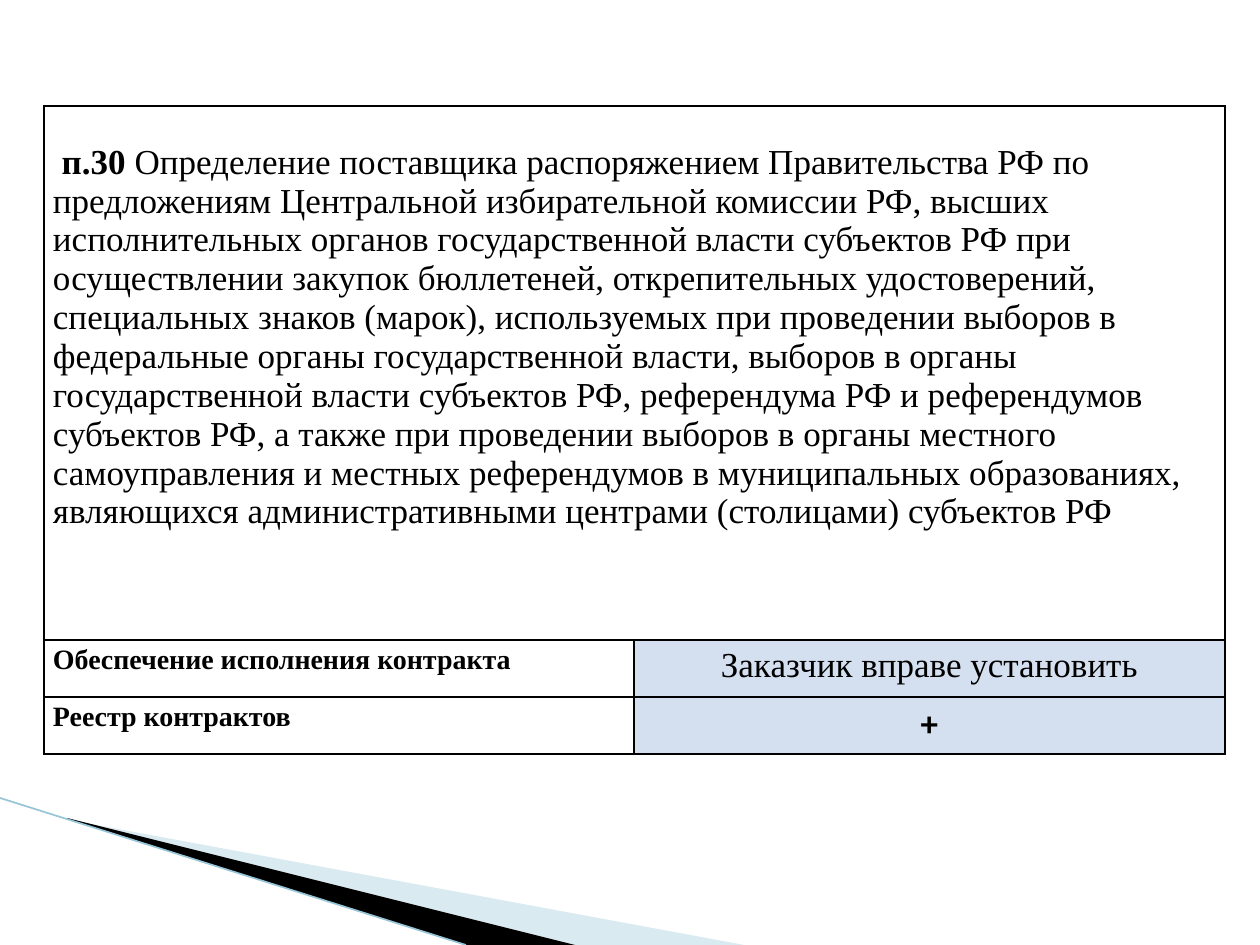
from dataclasses import dataclass

from lxml.etree import SubElement
from pptx import Presentation
from pptx.dml.color import RGBColor
from pptx.enum.text import MSO_ANCHOR, PP_ALIGN
from pptx.oxml.ns import qn
from pptx.util import Emu, Pt

SCALE = 914400 / 126
WIDE, HIGH = 1260, 945
SERIF, SANS = "Times New Roman", "Calibri"
BLACK, BLUE = "000000", "D4DFEF"


@dataclass
class Run:
    """A piece of text in one style."""
    text: str
    size: int = 20
    bold: bool = False
    font: str = SERIF


@dataclass
class Box:
    """The content and look of one table cell."""
    runs: list[Run]
    fill: str | None = None
    align: PP_ALIGN = PP_ALIGN.LEFT
    space: float = 1.15
    top: int = 0


@dataclass
class Wedge:
    """A filled outline with an opacity in percent."""
    points: list[tuple[int, int]]
    fill: str
    alpha: int = 100


WEDGES = [
    Wedge([(69, 820), (744, HIGH), (575, HIGH), (69, 819)], "A0CBDC", 40),
    Wedge([(67, 818), (575, HIGH), (466, HIGH), (68, 819)], BLACK),
]
COLS = [590, 591]
ROWS = [534, 57, 57]
CELLS = [
    [Box([
        Run(" п.30 ", bold=True),
        Run("Определение поставщика распоряжением Правительства РФ по "
            "предложениям Центральной избирательной комиссии РФ, высших "
            "исполнительных органов государственной власти субъектов РФ при "
            "осуществлении закупок бюллетеней, открепительных удостоверений, "
            "специальных знаков (марок), используемых при проведении выборов в "
            "федеральные органы государственной власти, выборов в органы "
            "государственной власти субъектов РФ, референдума РФ и референдумов "
            "субъектов РФ, а также при проведении выборов в органы местного "
            "самоуправления и местных референдумов в муниципальных образованиях, "
            "являющихся административными центрами (столицами) субъектов РФ"),
    ], space=1.0, top=37)],
    [Box([Run("Обеспечение исполнения контракта", 16, True)]),
     Box([Run("Заказчик вправе установить")], BLUE, PP_ALIGN.CENTER)],
    [Box([Run("Реестр контрактов", 16, True)]),
     Box([Run("+", bold=True, font=SANS)], BLUE, PP_ALIGN.CENTER)],
]


def px(num: int) -> Emu:
    """Turn pixels into EMU."""
    return Emu(round(num * SCALE))


def tint(code: str) -> RGBColor:
    """Turn a hex string into a colour."""
    return RGBColor.from_string(code)


def draw_wedge(slide, wedge: Wedge) -> None:
    """Draw one wedge of the corner decoration."""
    first, *rest = wedge.points
    pen = slide.shapes.build_freeform(*first, scale=SCALE)
    pen.add_line_segments(rest, close=True)
    shape = pen.convert_to_shape()
    shape.shadow.inherit = False
    shape.line.fill.background()
    shape.fill.solid()
    shape.fill.fore_color.rgb = tint(wedge.fill)
    if wedge.alpha < 100:
        hue = shape.fill._xPr.find(".//" + qn("a:srgbClr"))
        SubElement(hue, qn("a:alpha"), val=str(wedge.alpha * 1000))


def draw_edge(slide) -> None:
    """Draw the thin line along the wedges."""
    line = slide.shapes.add_connector(1, px(0), px(798), px(466), px(HIGH))
    line.line.color.rgb = tint("97C5D8")
    line.line.width = Pt(0.95)
    SubElement(line._element.spPr, qn("a:effectLst"))


def rule_cell(cell) -> None:
    """Give a cell black borders on all sides."""
    props = cell._tc.get_or_add_tcPr()
    for side in ("lnL", "lnR", "lnT", "lnB"):
        edge = SubElement(props, qn("a:" + side), w=str(Pt(1)))
        SubElement(SubElement(edge, qn("a:solidFill")), qn("a:srgbClr"), val=BLACK)


def fill_cell(cell, box: Box) -> None:
    """Write the text of a cell and set its look."""
    cell.margin_left = cell.margin_right = px(9)
    cell.margin_top, cell.margin_bottom = px(box.top), 0
    cell.vertical_anchor = MSO_ANCHOR.TOP
    if box.fill:
        cell.fill.solid()
        cell.fill.fore_color.rgb = tint(box.fill)
    else:
        cell.fill.background()
    para = cell.text_frame.paragraphs[0]
    para.alignment = box.align
    para.line_spacing = box.space
    for item in box.runs:
        run = para.add_run()
        run.text = item.text
        run.font.size = Pt(item.size)
        run.font.bold = item.bold
        run.font.name = item.font
        run.font.color.rgb = tint(BLACK)


def draw_table(slide) -> None:
    """Draw the table with its merged top row."""
    frame = slide.shapes.add_table(
        len(ROWS), len(COLS), px(44), px(106), px(sum(COLS)), px(sum(ROWS)))
    table = frame.table
    table.first_row = table.horz_banding = False
    for col, wide in zip(table.columns, COLS):
        col.width = px(wide)
    for row, high in zip(table.rows, ROWS):
        row.height = px(high)
    for cell in table.iter_cells():
        rule_cell(cell)
    table.cell(0, 0).merge(table.cell(0, 1))
    for row, boxes in enumerate(CELLS):
        for col, box in enumerate(boxes):
            fill_cell(table.cell(row, col), box)


def main() -> None:
    """Build the slide and save it."""
    deck = Presentation()
    deck.slide_width, deck.slide_height = px(WIDE), px(HIGH)
    slide = deck.slides.add_slide(deck.slide_layouts[6])
    for wedge in WEDGES:
        draw_wedge(slide, wedge)
    draw_edge(slide)
    draw_table(slide)
    deck.save("out.pptx")


if __name__ == "__main__":
    main()
